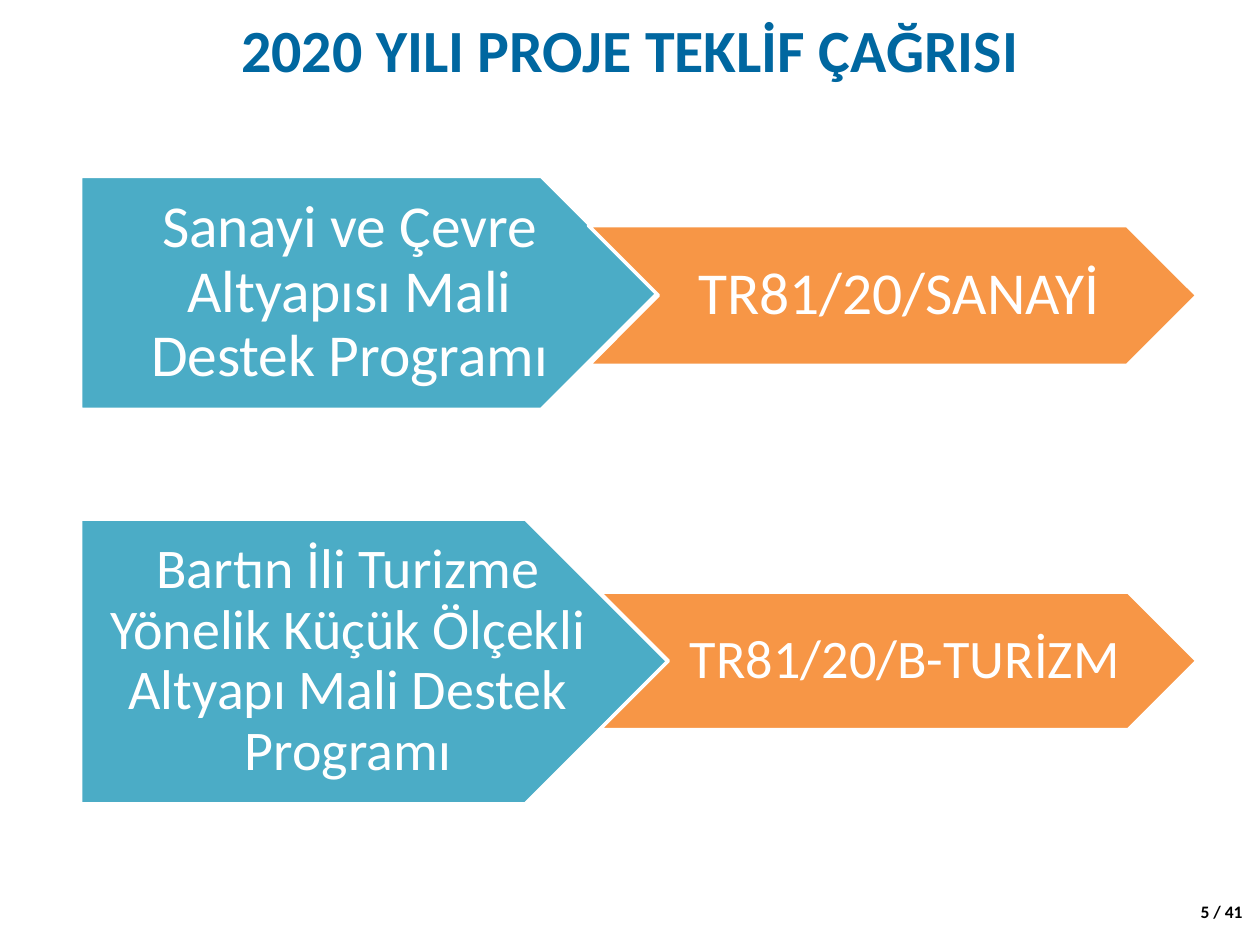
from dataclasses import dataclass

from pptx import Presentation
from pptx.dml.color import RGBColor
from pptx.enum.shapes import MSO_SHAPE as Preset
from pptx.enum.text import MSO_ANCHOR as Anchor, PP_ALIGN as Align
from pptx.slide import Slide
from pptx.util import Inches, Pt


def paint(color_format, hex_color):
    color_format.rgb = RGBColor.from_string(hex_color)


@dataclass
class ProgramSlide:
    slide: Slide
    font: str = "Calibri"
    white: str = "FFFFFF"
    blue: str = "0067A0"
    teal: str = "4BACC6"
    orange: str = "F79646"

    def text(self, box, wording, size, color, bold=False, align=Align.CENTER,
             anchor=Anchor.MIDDLE, insets=(0.1, 0.05, 0.1, 0.05), spacing=1.0):
        frame = self.slide.shapes.add_textbox(*map(Inches, box)).text_frame
        frame.word_wrap = True
        frame.vertical_anchor = anchor
        (frame.margin_left, frame.margin_top,
         frame.margin_right, frame.margin_bottom) = map(Inches, insets)
        paragraph = frame.paragraphs[0]
        paragraph.text = wording
        paragraph.alignment = align
        paragraph.line_spacing = spacing
        paragraph.font.name = self.font
        paragraph.font.size = Pt(size)
        paragraph.font.bold = bold
        paint(paragraph.font.color, color)

    def arrow(self, preset, box, color):
        arrow = self.slide.shapes.add_shape(preset, *map(Inches, box))
        arrow.shadow.inherit = False
        arrow.fill.solid()
        paint(arrow.fill.fore_color, color)
        paint(arrow.line.color, self.white)
        arrow.line.width = Pt(2)

    def program(self, name, name_box, name_size, code, code_box, code_size):
        left, top, width, height = name_box
        self.arrow(Preset.PENTAGON, name_box, self.teal)
        self.text((left, top, width - height / 4, height), name, name_size,
                  self.white, insets=(0.2, 0.1, 0.05, 0.1), spacing=0.9)
        left, top, width, height = code_box
        self.arrow(Preset.CHEVRON, code_box, self.orange)
        self.text((left + height / 2, top, width - height, height), code, code_size,
                  self.white, insets=(0.15, 0.1, 0.05, 0.1), spacing=0.9)


def main():
    deck = Presentation()
    deck.slide_width, deck.slide_height = Inches(10), Inches(7.5)
    call = ProgramSlide(deck.slides.add_slide(deck.slide_layouts[6]))

    call.text((9.43, 7.1, 0.68, 0.3), "5 / 41", 10, "000000", bold=True,
              align=Align.LEFT, anchor=Anchor.TOP)
    call.text((0.5, 0.07, 9, 0.63), "2020 YILI PROJE TEKLİF ÇAĞRISI", 34.2,
              call.blue, bold=True)
    call.program("Bartın İli Turizme Yönelik Küçük Ölçekli Altyapı Mali Destek Programı",
                 (0.64, 4.12, 4.66, 2.26), 32,
                 "TR81/20/B-TURİZM", (4.76, 4.7, 4.74, 1.09), 31)
    call.program("Sanayi ve Çevre Altyapısı Mali Destek Programı",
                 (0.64, 1.4, 4.58, 1.85), 34,
                 "TR81/20/SANAYİ", (4.67, 1.79, 4.83, 1.11), 34)

    deck.save("out.pptx")


if __name__ == "__main__":
    main()
